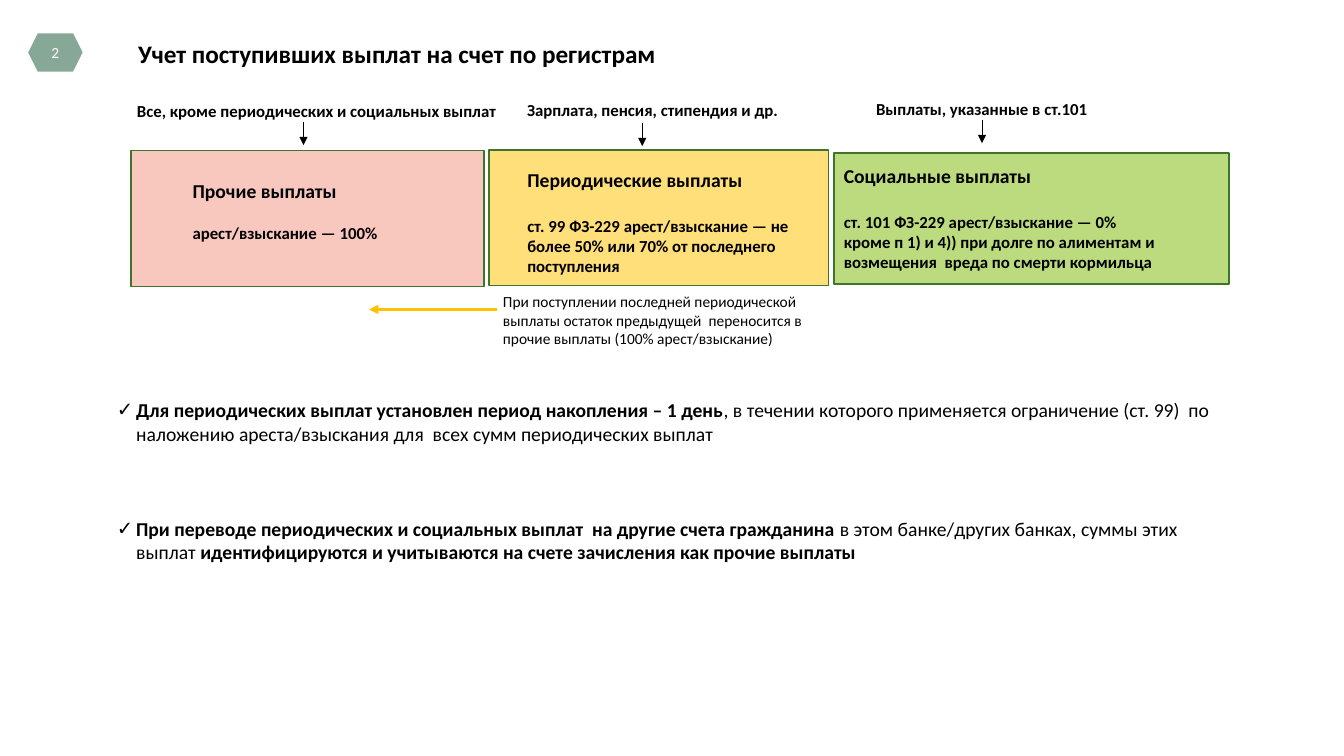
"""Build the slide on sorting incoming payments by register."""
from lxml import etree
from pptx import Presentation
from pptx.dml.color import RGBColor
from pptx.enum.shapes import MSO_CONNECTOR, MSO_SHAPE
from pptx.enum.text import MSO_ANCHOR, MSO_AUTO_SIZE, PP_ALIGN
from pptx.oxml.ns import qn
from pptx.util import Inches, Pt

RECT, HEX = MSO_SHAPE.RECTANGLE, MSO_SHAPE.HEXAGON
LINE = MSO_CONNECTOR.STRAIGHT
TOP, MID = MSO_ANCHOR.TOP, MSO_ANCHOR.MIDDLE
LEFT, MIDDLE = PP_ALIGN.LEFT, PP_ALIGN.CENTER
FIXED = MSO_AUTO_SIZE.NONE
HUES = {
    "text": "000000", "white": "FFFFFF", "edge": "3E752A", "badge": "87A896",
    "other": "F8C8BE", "regular": "FFDF79", "social": "BBDB7E", "move": "FFC000",
}


def hue(name):
    """Return a palette colour."""
    return RGBColor.from_string(HUES[name])


def write(shape, parts, anchor=TOP, align=LEFT, color="text", wrap=True):
    """Fill a shape with paragraphs of (gap, size, runs)."""
    frame = shape.text_frame
    frame.word_wrap, frame.auto_size = wrap, FIXED
    frame.vertical_anchor = anchor
    for i, (gap, size, runs) in enumerate(parts):
        para = frame.add_paragraph() if i else frame.paragraphs[0]
        para.alignment = align
        para.space_before = Pt(gap)
        for text, bold in runs:
            run = para.add_run()
            run.text = text
            run.font.name, run.font.size = "Calibri", Pt(size)
            run.font.bold = bold
            run.font.color.rgb = hue(color)
    return frame


deck = Presentation()
deck.slide_width, deck.slide_height = Inches(13.33), Inches(7.5)
slide = deck.slides.add_slide(deck.slide_layouts[1])
shapes = slide.shapes
title, body = slide.placeholders

for holder, spot in ((title, (1.27, 0.33, 5.38, 0.4)), (body, (1.06, 3.9, 11.18, 1.99))):
    holder.left, holder.top, holder.width, holder.height = map(Inches, spot)

write(title, [(0, 18, [("Учет поступивших выплат на счет по регистрам", True)])],
      MID, wrap=False)

points = write(body, [
    (0, 14, [
        ("Для периодических выплат установлен период накопления – 1 день", True),
        (", в течении которого применяется ограничение (ст. 99)  по наложению "
         "ареста/взыскания для  всех сумм периодических выплат", False)]),
    (51, 14, [
        ("При переводе периодических и социальных выплат  на другие счета гражданина ", True),
        ("в этом банке/других банках, суммы этих выплат ", False),
        ("идентифицируются и учитываются на счете зачисления как прочие выплаты", True)]),
])
for para in points.paragraphs:
    props = para._p.get_or_add_pPr()
    props.set("marL", str(Inches(0.19)))
    props.set("indent", str(-Inches(0.19)))
    etree.SubElement(props, qn("a:buChar"), char="✓")

badge = shapes.add_shape(HEX, Inches(0.28), Inches(0.33), Inches(0.54), Inches(0.38))
badge.shadow.inherit = False
badge.fill.solid()
badge.fill.fore_color.rgb = hue("badge")
badge.line.fill.background()
frame = write(badge, [(0, 11, [("2", False)])], MID, MIDDLE, "white")
frame.margin_left = frame.margin_right = Inches(0.05)

boxes = [
    ("other", (1.3, 1.49, 3.5, 1.35), (0.61, 0.28, 0.1), 15, "Прочие выплаты",
     ["арест/взыскание — 100%"]),
    ("regular", (4.85, 1.49, 3.37, 1.34), (0.38, 0.18, 0.16), 17, "Периодические выплаты",
     ["ст. 99 ФЗ-229 арест/взыскание — не более 50% или 70% от последнего поступления"]),
    ("social", (8.27, 1.52, 3.92, 1.3), (0.1, 0.11, 0.1), 17, "Социальные выплаты",
     ["ст. 101 ФЗ-229 арест/взыскание — 0%",
      "кроме п 1) и 4)) при долге по алиментам и возмещения  вреда по смерти кормильца"]),
]
for name, spot, pads, gap, head, rules in boxes:
    box = shapes.add_shape(RECT, *map(Inches, spot))
    box.shadow.inherit = False
    box.fill.solid()
    box.fill.fore_color.rgb = hue(name)
    box.line.color.rgb = hue("edge")
    box.line.width = Pt(1)
    parts = [(0, 14, [(head, True)])]
    parts += [(0 if i else gap, 12, [(rule, True)]) for i, rule in enumerate(rules)]
    frame = write(box, parts)
    frame.margin_left, frame.margin_top, frame.margin_right = map(Inches, pads)

labels = [
    ((1.26, 0.95, 3.83, 0.3), 12, True, "Все, кроме периодических и социальных выплат"),
    ((5.13, 0.94, 2.8, 0.3), 12, True, "Зарплата, пенсия, стипендия и др."),
    ((8.59, 0.93, 2.42, 0.3), 12, True, "Выплаты, указанные в ст.101"),
    ((4.89, 2.85, 3.54, 0.66), 11, False,
     "При поступлении последней периодической выплаты остаток предыдущей  "
     "переносится в прочие выплаты (100% арест/взыскание)"),
]
for spot, size, bold, text in labels:
    label = shapes.add_textbox(*map(Inches, spot))
    write(label, [(0, size, [(text, bold)])], wrap=not bold)

arrows = [
    ((3.01, 1.21, 3.01, 1.44), "text", 0.5),
    ((6.37, 1.22, 6.37, 1.45), "text", 0.5),
    ((9.74, 1.19, 9.74, 1.42), "text", 0.5),
    ((4.93, 3.07, 3.66, 3.07), "move", 2.25),
]
for ends, name, width in arrows:
    arrow = shapes.add_connector(LINE, *map(Inches, ends))
    arrow.line.color.rgb = hue(name)
    arrow.line.width = Pt(width)
    etree.SubElement(arrow.line._get_or_add_ln(), qn("a:tailEnd"), type="triangle")
    etree.SubElement(arrow._element.spPr, qn("a:effectLst"))

deck.save("out.pptx")
